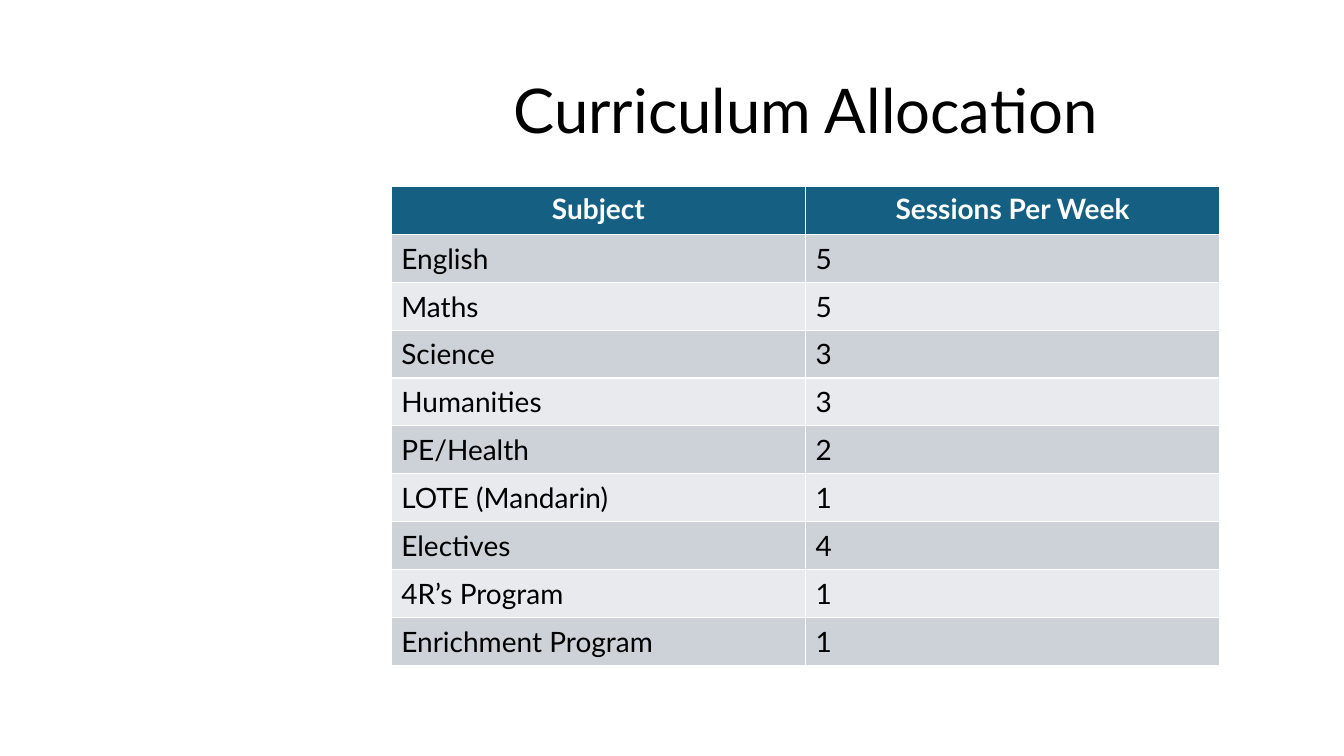
"""Build the Curriculum Allocation slide with its table of weekly sessions."""
from pptx import Presentation
from pptx import util as u
from pptx.dml.color import RGBColor
from pptx.enum import text

FONT = "Lato"
BLACK = RGBColor(0x00, 0x00, 0x00)
WHITE = RGBColor(0xFF, 0xFF, 0xFF)
TEAL = RGBColor(0x15, 0x60, 0x82)
BAND_DARK = RGBColor(0xCC, 0xD2, 0xD8)
BAND_LIGHT = RGBColor(0xE8, 0xEA, 0xED)

ROWS = [
    ("Subject", "Sessions Per Week"),
    ("English", "5"),
    ("Maths", "5"),
    ("Science", "3"),
    ("Humanities", "3"),
    ("PE/Health", "2"),
    ("LOTE (Mandarin)", "1"),
    ("Electives", "4"),
    ("4R’s Program", "1"),
    ("Enrichment Program", "1"),
]


def write(tf, words, size=20, color=BLACK, bold=False,
          align=text.PP_ALIGN.LEFT, spacing=1.0):
    p = tf.paragraphs[0]
    p.alignment = align
    p.line_spacing = spacing
    r = p.add_run()
    r.text = words
    r.font.name = FONT
    r.font.size = u.Pt(size)
    r.font.bold = bold
    r.font.color.rgb = color


prs = Presentation()
prs.slide_width, prs.slide_height = u.Cm(33.87), u.Cm(19.05)
s = prs.slides.add_slide(prs.slide_layouts[6])

title = s.shapes.add_textbox(u.Cm(6.76), u.Cm(1.02), u.Cm(27.1), u.Cm(3.68))
tf = title.text_frame
tf.word_wrap = True
tf.vertical_anchor = text.MSO_ANCHOR.MIDDLE
write(tf, "Curriculum Allocation", size=44, align=text.PP_ALIGN.CENTER, spacing=0.9)

table = s.shapes.add_table(len(ROWS), 2, u.Cm(9.86), u.Cm(4.7),
                           u.Cm(20.88), u.Cm(12.06)).table
for i, row in enumerate(ROWS):
    for j, words in enumerate(row):
        cell = table.cell(i, j)
        cell.fill.solid()
        if i == 0:
            cell.fill.fore_color.rgb = TEAL
            write(cell.text_frame, words, color=WHITE, bold=True,
                  align=text.PP_ALIGN.CENTER)
        else:
            cell.fill.fore_color.rgb = BAND_DARK if i % 2 else BAND_LIGHT
            cell.vertical_anchor = text.MSO_ANCHOR.MIDDLE
            write(cell.text_frame, words)

prs.save("out.pptx")
